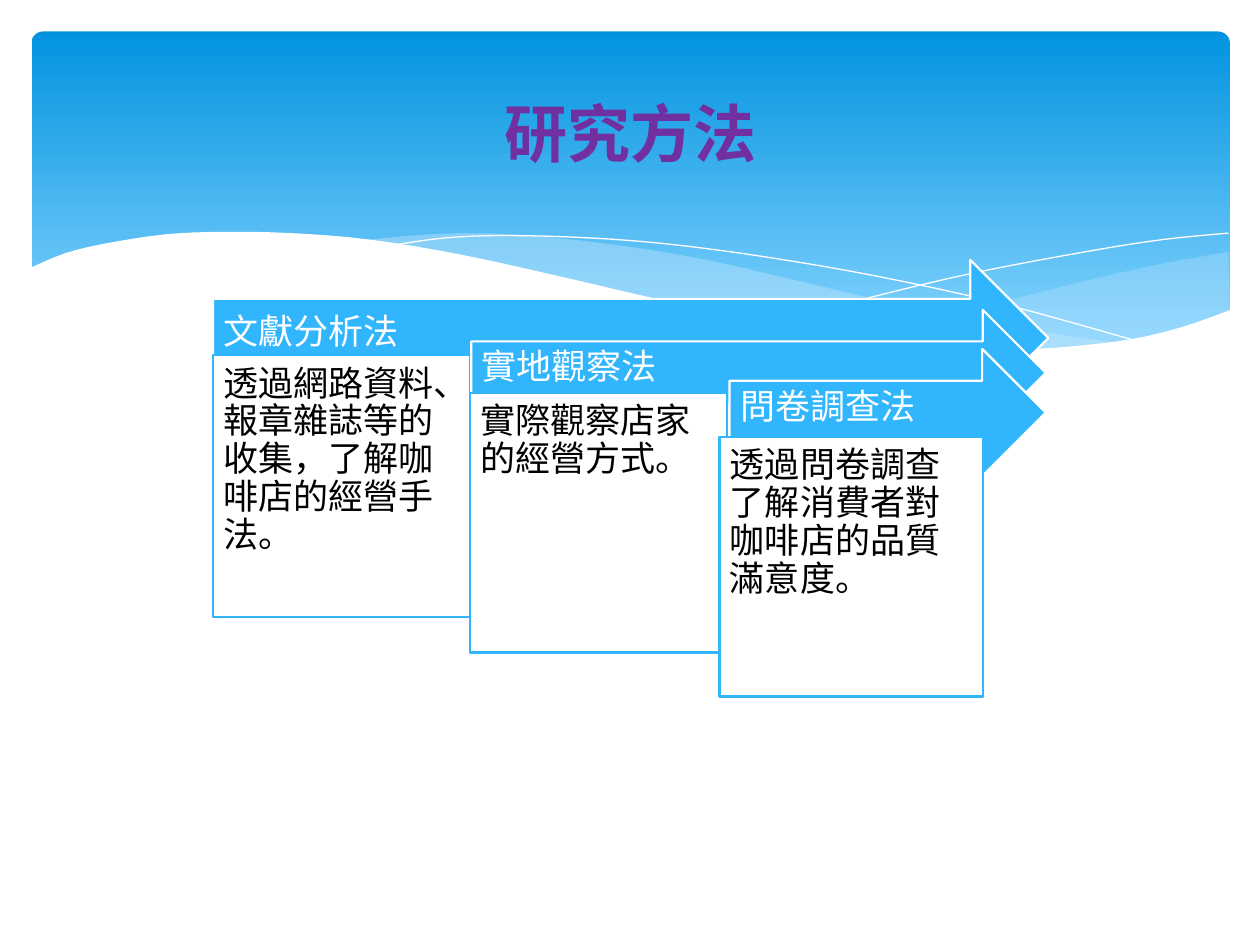
"""Build the research methods slide: three stepped arrows with description boxes over a wave banner."""
from lxml import etree
from pptx import Presentation
from pptx.dml.color import RGBColor
from pptx.enum.shapes import MSO_SHAPE
from pptx.enum.text import MSO_ANCHOR, PP_ALIGN
from pptx.oxml.ns import qn
from pptx.util import Pt

ROUNDED, RECTANGLE, ARROW = MSO_SHAPE.ROUNDED_RECTANGLE, MSO_SHAPE.RECTANGLE, MSO_SHAPE.RIGHT_ARROW
TOP, MIDDLE = MSO_ANCHOR.TOP, MSO_ANCHOR.MIDDLE
LEFT, CENTER = PP_ALIGN.LEFT, PP_ALIGN.CENTER

THEME = {
    "font": "Noto Sans CJK SC", "title_size": 36, "body_size": 20,
    "title": "7030A0", "accent": "31B6FD", "white": "FFFFFF", "black": "000000",
    "banner_top": "0293E0", "banner_bottom": "83D3FE", "wave": "C6E7FC",
}

TITLE = "研究方法"
METHODS = [
    {"name": "文獻分析法", "detail": "透過網路資料、報章雜誌等的收集，了解咖啡店的經營手法。",
     "arrow": (121.7, 148.5, 477.4, 89.3), "box": (121.7, 203, 146.9, 149.8)},
    {"name": "實地觀察法", "detail": "實際觀察店家的經營方式。",
     "arrow": (269.3, 177.1, 328.3, 72), "box": (268.6, 224.6, 146.9, 148.3)},
    {"name": "問卷調查法", "detail": "透過問卷調查了解消費者對咖啡店的品質滿意度。",
     "arrow": (416.9, 199.4, 180.7, 72.7), "box": (411.1, 249.8, 150.5, 148.3)},
]
TITLE_FRAME = (36, 26.6, 648, 98.6)
BANNER_FRAME = (18, 18, 684.7, 194.4)
ARROW_INSETS = (6, 6, 20, 11)
BOX_INSETS = (6, 6, 6, 6)

RIGHT_WAVE = [
    [(702, 144), (673, 149), (641.5, 155.5), (620, 160.6), (579.6, 170.6), (542, 178.6), (476, 190.8)],
    [(476, 190.8), (507.6, 195), (545, 198.7), (578, 200), (615, 198.7), (646, 194.4), (673, 188.6),
     (702.7, 177.8)],
]
MIDDLE_WAVE = [
    [(643, 196.6), (602.6, 190.8), (558, 182.9), (508.3, 172.8), (452.9, 159.8), (409.7, 149.8),
     (370, 142.6), (318.2, 136), (273.6, 133.2), (236, 134.6), (206, 137.5)],
    [(206, 137.5), (246.2, 143.3), (290.9, 151.9), (323.3, 159.8), (381.6, 172.8), (432.7, 183.6),
     (478.8, 191.5), (519.8, 197.3), (565, 200), (603.4, 200), (643, 196.6)],
]
FALLING_LINE = [
    [(222.5, 140.4), (254, 136), (288.7, 134.6), (337.7, 136), (383.8, 139.7), (437.8, 146.9),
     (500.4, 157.7), (572.4, 173.5), (653, 195.8)],
]
RISING_LINE = [
    [(441.4, 185), (500.4, 169.2), (558.7, 155.5), (623.5, 143.3), (665.3, 136.8), (702, 133.2)],
]
WHITE_WAVE = [
    [(703.4, 177), (676.8, 186.5), (647.3, 193.7), (612, 198), (582.5, 199.4), (535.7, 197.3),
     (481, 190.8), (416.9, 180), (362, 167.8), (321.8, 158.4), (262.8, 145.4), (210.2, 136.8),
     (165.6, 133.2), (127.4, 132.5), (95, 133.9), (61.2, 139), (37.4, 144.7), (16.6, 153.4)],
    [(16.6, 237), (703.4, 237)],
]
WAVES = [
    {"runs": RIGHT_WAVE, "fill": "wave", "opacity": 29},
    {"runs": MIDDLE_WAVE, "fill": "wave", "opacity": 40},
    {"runs": FALLING_LINE, "line": "white"},
    {"runs": RISING_LINE, "line": "white"},
    {"runs": WHITE_WAVE, "fill": "white"},
]


def color(name):
    return RGBColor.from_string(THEME[name])


def points(values):
    return [Pt(value) for value in values]


def smooth(knots, steps=4):
    """Return points on a Catmull-Rom curve through the knots."""
    if len(knots) < 3:
        return knots
    padded = [knots[0], *knots, knots[-1]]
    curve = [knots[0]]
    for before, start, end, after in zip(padded, padded[1:], padded[2:], padded[3:]):
        for step in range(1, steps + 1):
            t = step / steps
            curve.append(tuple(
                (2 * b + (c - a) * t + (2 * a - 5 * b + 4 * c - d) * t ** 2
                 + (3 * b - a - 3 * c + d) * t ** 3) / 2
                for a, b, c, d in zip(before, start, end, after)))
    return curve


def paint(shape, fill=None, line=None, width=0):
    shape.shadow.inherit = False
    if fill:
        shape.fill.solid()
        shape.fill.fore_color.rgb = color(fill)
    else:
        shape.fill.background()
    if line:
        shape.line.color.rgb = color(line)
        shape.line.width = Pt(width)
    else:
        shape.line.fill.background()


def write(shape, text, size, ink, anchor, insets, align=LEFT, bold=False, spacing=0.9):
    frame = shape.text_frame
    frame.word_wrap = True
    frame.vertical_anchor = anchor
    frame.margin_left, frame.margin_top, frame.margin_right, frame.margin_bottom = points(insets)
    frame.text = text
    paragraph = frame.paragraphs[0]
    paragraph.alignment = align
    paragraph.line_spacing = spacing
    font = paragraph.font
    font.name, font.size, font.bold = THEME["font"], Pt(THEME[size]), bold
    font.color.rgb = color(ink)
    properties = paragraph._p.pPr.find(qn("a:defRPr"))
    etree.SubElement(properties, qn("a:ea"), typeface=THEME["font"])


def add_banner(shapes):
    banner = shapes.add_shape(ROUNDED, *points(BANNER_FRAME))
    banner.adjustments[0] = 0.034
    paint(banner)
    banner.fill.gradient()
    banner.fill.gradient_angle = 270
    stops = zip(banner.fill.gradient_stops, ("banner_top", "banner_bottom"), (0, 0.9))
    for stop, name, position in stops:
        stop.color.rgb = color(name)
        stop.position = position


def add_wave(shapes, runs, fill=None, line=None, opacity=100):
    start, *rest = [points(point) for run in runs for point in smooth(run)]
    builder = shapes.build_freeform(*start)
    builder.add_line_segments(rest, close=fill is not None)
    wave = builder.convert_to_shape()
    paint(wave, fill, line)
    if opacity < 100:
        solid = wave.element.spPr.find(qn("a:solidFill"))
        etree.SubElement(solid[0], qn("a:alpha"), val=str(opacity * 1000))


def add_method(shapes, method):
    arrow = shapes.add_shape(ARROW, *points(method["arrow"]))
    paint(arrow, "accent", "white", 1.25)
    write(arrow, method["name"], "body_size", "white", MIDDLE, ARROW_INSETS)
    box = shapes.add_shape(RECTANGLE, *points(method["box"]))
    paint(box, "white", "accent", 1.25)
    write(box, method["detail"], "body_size", "black", TOP, BOX_INSETS)


def main():
    presentation = Presentation()
    presentation.slide_width, presentation.slide_height = Pt(720), Pt(540)
    slide = presentation.slides.add_slide(presentation.slide_layouts[5])
    shapes = slide.shapes
    add_banner(shapes)
    for wave in WAVES:
        add_wave(shapes, **wave)
    title = shapes.title
    shapes.element.append(title.element)
    title.left, title.top, title.width, title.height = points(TITLE_FRAME)
    write(title, TITLE, "title_size", "title", MIDDLE, (7.2, 3.6, 7.2, 3.6), CENTER, True, 1)
    for method in METHODS:
        add_method(shapes, method)
    presentation.save("out.pptx")


if __name__ == "__main__":
    main()
